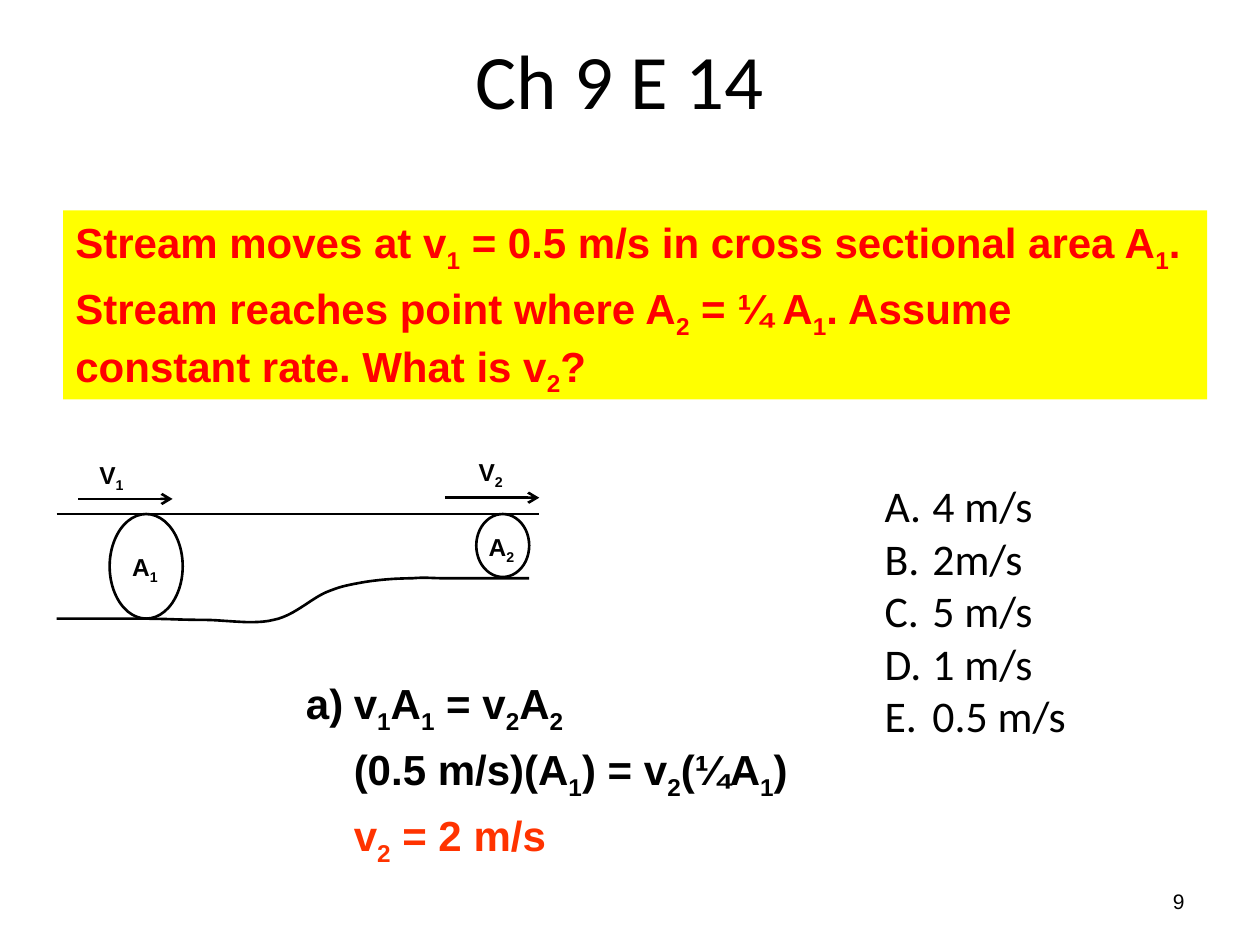
import pptx
import pptx.dml.color
import pptx.enum.shapes
import pptx.enum.text
import pptx.oxml.ns
import pptx.util
from lxml import etree
from pptx.util import Inches

ALIGN = pptx.enum.text.PP_ALIGN
ANCHOR = pptx.enum.text.MSO_ANCHOR
BLACK, RED, ORANGE, YELLOW = "000000", "FF0000", "FF3300", "FFFF00"


def color(value):
    return pptx.dml.color.RGBColor.from_string(value)


def add_xml(parent, tag, **attributes):
    return etree.SubElement(parent, pptx.oxml.ns.qn(tag), **attributes)


def bezier(start, curves, steps=12):
    """Points along a chain of cubic curves."""
    points = [start]
    for curve in curves:
        a, b, c, d = points[-1], *curve
        for step in range(1, steps + 1):
            t = step / steps
            u = 1 - t
            points.append(tuple(
                u**3 * a[i] + 3 * u * u * t * b[i] + 3 * u * t * t * c[i] + t**3 * d[i]
                for i in (0, 1)))
    return points


class SlideBuilder:
    heading_font, text_font = "Calibri", "Arial"
    line_width = 1.5
    hang = 0.38

    def __init__(self, slide):
        self.slide = slide

    def place(self, shape, left, top, width, height):
        shape.left, shape.top = Inches(left), Inches(top)
        shape.width, shape.height = Inches(width), Inches(height)

    def set_lines(self, shape, lines, size, font=None, bold=False, colors=(BLACK,),
                  align=ALIGN.LEFT, anchor=ANCHOR.TOP, gap=0, wrap=True,
                  numbering=None, numbered=0):
        """Fill a shape with lines; an underscore makes the next character a subscript."""
        frame = shape.text_frame
        frame.word_wrap, frame.vertical_anchor = wrap, anchor
        frame.auto_size = pptx.enum.text.MSO_AUTO_SIZE.NONE
        for index, line in enumerate(lines):
            paragraph = frame.add_paragraph() if index else frame.paragraphs[0]
            paragraph.alignment = align
            paragraph.space_before = pptx.util.Pt(gap if index else 0)
            if numbering:
                properties = paragraph._p.get_or_add_pPr()
                properties.set("marL", str(Inches(self.hang)))
                properties.set("indent", str(-Inches(self.hang) if index < numbered else 0))
                if index < numbered:
                    add_xml(properties, "a:buFont", typeface="+mj-lt")
                    add_xml(properties, "a:buAutoNum", type=numbering)
            paragraph.font.name = font or self.text_font
            paragraph.font.size = pptx.util.Pt(size)
            paragraph.font.bold = bold
            paragraph.font.color.rgb = color(colors[min(index, len(colors) - 1)])
            first, *rest = line.split("_")
            if first:
                paragraph.add_run().text = first
            for part in rest:
                subscript = paragraph.add_run()
                subscript.text = part[0]
                subscript._r.get_or_add_rPr().set("baseline", "-25000")
                if part[1:]:
                    paragraph.add_run().text = part[1:]

    def placeholder(self, index, box, lines, size, **style):
        shape = self.slide.placeholders[index]
        self.place(shape, *box)
        self.set_lines(shape, lines, size, font=self.heading_font, **style)

    def text(self, box, lines, size, **style):
        shape = self.slide.shapes.add_textbox(*map(Inches, box))
        self.set_lines(shape, lines, size, **style)

    def outline(self, shape):
        shape.line.color.rgb = color(BLACK)
        shape.line.width = pptx.util.Pt(self.line_width)

    def panel(self, box, fill, lines, size, **style):
        kind = pptx.enum.shapes.MSO_SHAPE.RECTANGLE
        shape = self.slide.shapes.add_shape(kind, *map(Inches, box))
        shape.shadow.inherit = False
        shape.fill.solid()
        shape.fill.fore_color.rgb = color(fill)
        shape.line.fill.background()
        self.set_lines(shape, lines, size, **style)

    def ellipse(self, *box):
        kind = pptx.enum.shapes.MSO_SHAPE.OVAL
        shape = self.slide.shapes.add_shape(kind, *map(Inches, box))
        shape.shadow.inherit = False
        shape.fill.background()
        self.outline(shape)

    def line(self, left, top, right, arrow=False):
        kind = pptx.enum.shapes.MSO_CONNECTOR.STRAIGHT
        connector = self.slide.shapes.add_connector(
            kind, Inches(left), Inches(top), Inches(right), Inches(top))
        self.outline(connector)
        if arrow:
            add_xml(connector.line._get_or_add_ln(), "a:tailEnd", type="arrow")
        add_xml(connector._element.spPr, "a:effectLst")

    def curve(self, start, curves):
        points = [(Inches(x), Inches(y)) for x, y in bezier(start, curves)]
        builder = self.slide.shapes.build_freeform(*points[0])
        builder.add_line_segments(points[1:], close=False)
        shape = builder.convert_to_shape()
        shape.shadow.inherit = False
        shape.fill.background()
        self.outline(shape)


def main():
    presentation = pptx.Presentation()
    presentation.slide_width, presentation.slide_height = Inches(10), Inches(7.5)
    builder = SlideBuilder(presentation.slides.add_slide(presentation.slide_layouts[1]))

    # Title and question
    builder.placeholder(0, (0.42, 0, 9, 1.25), ["Ch 9 E 14"], 44,
                        align=ALIGN.CENTER, anchor=ANCHOR.MIDDLE)
    builder.panel((0.5, 1.67, 9.08, 1.5), YELLOW, [
        "Stream moves at v_1 = 0.5 m/s in cross sectional area A_1.",
        "Stream reaches point where A_2 = ¼ A_1. Assume constant rate. What is v_2?",
    ], 24, bold=True, colors=(RED,), gap=5)

    # Solution
    builder.text((2.33, 5.33, 4.07, 1.46), [
        "v_1A_1 = v_2A_2",
        "(0.5 m/s)(A_1) = v_2(¼A_1)",
        "v_2 = 2 m/s",
    ], 24, bold=True, colors=(BLACK, BLACK, ORANGE), gap=5, wrap=False,
        numbering="alphaLcParenR", numbered=1)

    # Stream banks
    builder.line(0.45, 4.08, 4.28)
    builder.curve((0.45, 4.91), [
        ((0.72, 4.91), (0.92, 4.91), (1.12, 4.91)),
        ((1.31, 4.91), (1.44, 4.92), (1.62, 4.92)),
        ((1.79, 4.92), (2.01, 4.96), (2.17, 4.92)),
        ((2.33, 4.89), (2.47, 4.75), (2.59, 4.7)),
        ((2.71, 4.65), (2.78, 4.64), (2.89, 4.62)),
        ((3.01, 4.6), (3.15, 4.59), (3.27, 4.59)),
        ((3.38, 4.58), (3.41, 4.59), (3.56, 4.59)),
        ((3.72, 4.59), (4.07, 4.59), (4.2, 4.59)),
    ])

    # Cross sections and velocity arrows
    builder.ellipse(0.87, 4.08, 0.58, 0.83)
    builder.ellipse(3.78, 4.08, 0.42, 0.5)
    for left, top in ((0.62, 3.96), (3.53, 3.95)):
        builder.line(left, top, left + 0.75, arrow=True)
    for label, left, top in (("V_1", 0.69, 3.6), ("V_2", 3.7, 3.58),
                             ("A_1", 0.95, 4.33), ("A_2", 3.78, 4.17)):
        builder.text((left, top, 0.58, 0.33), [label], 14, bold=True)

    # Answer choices
    choices = ["4 m/s", "2m/s", "5 m/s", "1 m/s", "0.5 m/s"]
    builder.placeholder(1, (6.92, 3.75, 3.33, 2.2), choices, 25,
                        numbering="alphaUcPeriod", numbered=len(choices))

    # Page number
    builder.text((7.17, 6.95, 2.33, 0.4), ["9"], 12, align=ALIGN.RIGHT, anchor=ANCHOR.MIDDLE)

    presentation.save("out.pptx")


if __name__ == "__main__":
    main()
